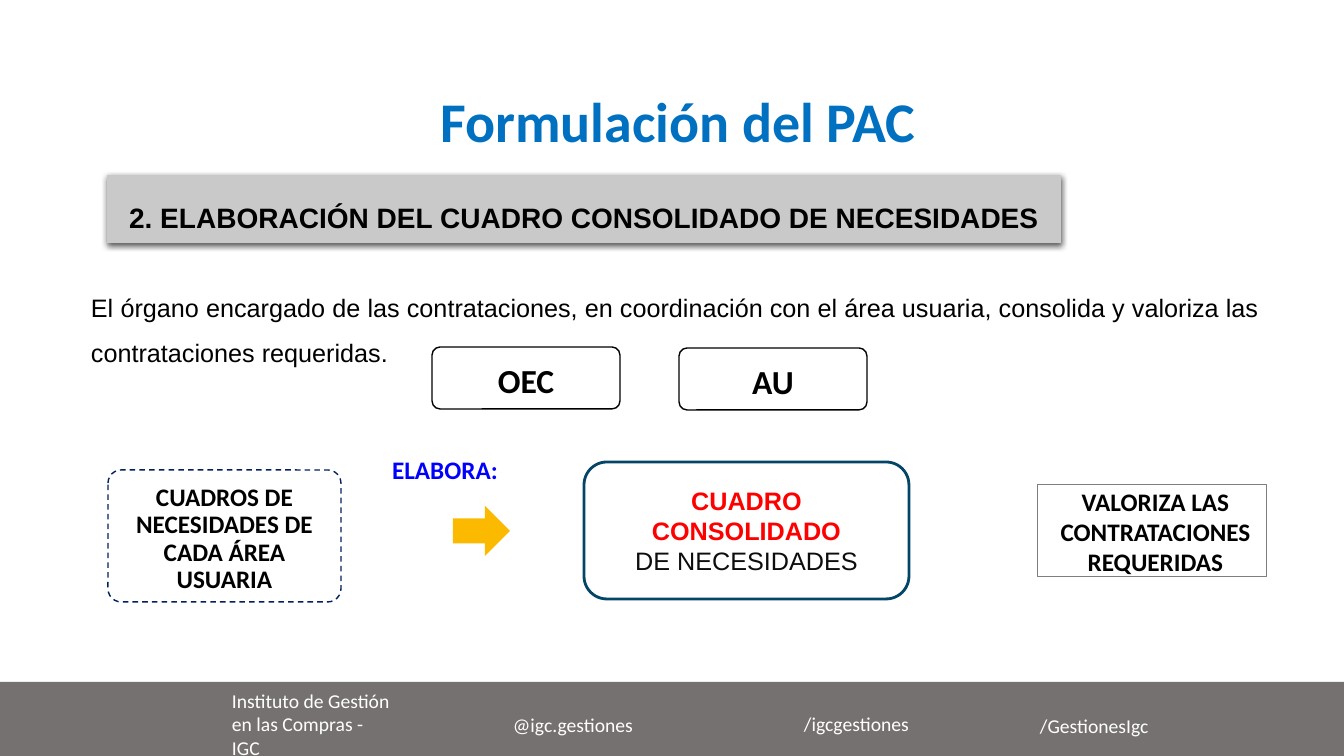
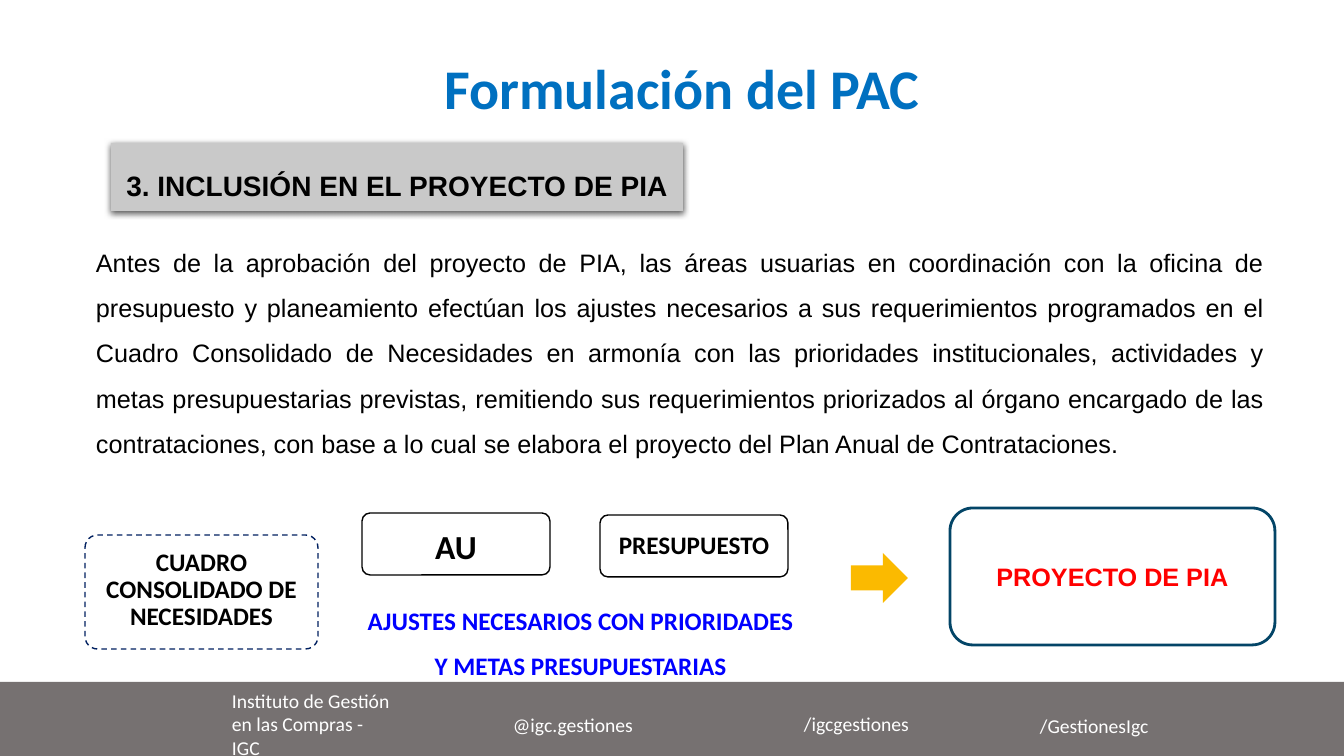
"""Build two slides on drawing up the annual procurement plan (PAC)."""
from lxml import etree
from pptx import Presentation
from pptx.dml.color import RGBColor
from pptx.enum.dml import MSO_LINE
from pptx.enum.shapes import MSO_SHAPE
from pptx.enum.text import MSO_ANCHOR, PP_ALIGN
from pptx.oxml import parse_xml
from pptx.oxml.ns import nsdecls
from pptx.util import Emu, Pt

RECTANGLE = MSO_SHAPE.RECTANGLE
ROUNDED = MSO_SHAPE.ROUNDED_RECTANGLE
ARROW = MSO_SHAPE.RIGHT_ARROW
DASH = MSO_LINE.DASH
TOP, MIDDLE = MSO_ANCHOR.TOP, MSO_ANCHOR.MIDDLE
LEFT, CENTER, JUSTIFY = PP_ALIGN.LEFT, PP_ALIGN.CENTER, PP_ALIGN.JUSTIFY

PX = 914400 / 100.8
WIDTH, HEIGHT = 1344, 756
COLORS = {
    "black": "000000", "white": "FFFFFF", "title": "0070C0", "heading": "C9C9C9",
    "footer": "767171", "input": "002060", "result": "034567", "red": "FF0000",
    "near_black": "0D0D0D", "label": "0000FF", "arrow": "FBBA00", "frame": "7E7E7E",
}
FOOTER_TEXTS = [
    (222, 724, "Instituto de Gestión en las Compras - IGC"),
    (503, 725, "@igc.gestiones"),
    (794, 724, "/igcgestiones"),
    (1030, 726, "/GestionesIgc"),
]
SLIDES = [
    {
        "title": (281, 91),
        "heading": (107, 175, 954, 68, "2. ELABORACIÓN DEL CUADRO CONSOLIDADO DE NECESIDADES"),
        "body": (81, 272, 1188, 102,
                 "El órgano encargado de las contrataciones, en coordinación con el área usuaria, "
                 "consolida y valoriza las contrataciones requeridas."),
        "input": (108, 470, 233, 132, "CUADROS DE NECESIDADES DE CADA ÁREA USUARIA"),
        "actors": [(432, 347, "OEC", 24), (679, 348, "AU", 24)],
        "arrow": (453, 506),
        "label": (375, 434, 140, 56, "ELABORA:"),
        "result": (584, 462, ["CUADRO CONSOLIDADO", "DE NECESIDADES"]),
        "framed": [(1038, 484, 229, 93, "VALORIZA LAS CONTRATACIONES REQUERIDAS")],
    },
    {
        "title": (285, 58),
        "heading": (111, 143, 572, 68, "3. INCLUSIÓN EN EL PROYECTO DE PIA"),
        "body": (86, 227, 1188, 239,
                 "Antes de la aprobación del proyecto de PIA, las áreas usuarias en coordinación "
                 "con la oficina de presupuesto y planeamiento efectúan los ajustes necesarios a "
                 "sus requerimientos programados en el Cuadro Consolidado de Necesidades en "
                 "armonía con las prioridades institucionales, actividades y metas "
                 "presupuestarias previstas, remitiendo sus requerimientos priorizados al órgano "
                 "encargado de las contrataciones, con base a lo cual se elabora el proyecto del "
                 "Plan Anual de Contrataciones."),
        "input": (85, 535, 233, 114, "CUADRO CONSOLIDADO DE NECESIDADES"),
        "actors": [(362, 513, "AU", 24), (600, 515, "PRESUPUESTO", 18)],
        "arrow": (851, 553),
        "label": (354, 585, 453, 97, "AJUSTES NECESARIOS CON PRIORIDADES Y METAS PRESUPUESTARIAS"),
        "result": (950, 508, ["PROYECTO DE PIA"]),
        "framed": [],
    },
]


def add_panel(slide, kind, bounds, fill=None, line=None, line_width=1, radius=None):
    """Add a preset shape, or a text box when kind is None."""
    box = [Emu(round(value * PX)) for value in bounds]
    if kind is None:
        return slide.shapes.add_textbox(*box)
    shape = slide.shapes.add_shape(kind, *box)
    shape.shadow.inherit = False
    if fill:
        shape.fill.solid()
        shape.fill.fore_color.rgb = RGBColor.from_string(COLORS[fill])
    else:
        shape.fill.background()
    if line:
        shape.line.color.rgb = RGBColor.from_string(COLORS[line])
        shape.line.width = Pt(line_width)
    else:
        shape.line.fill.background()
    if radius:
        shape.adjustments[0] = round(radius / min(bounds[2:]), 2)
    return shape


def write(shape, texts, size, color="black", font="Calibri", bold=True, align=CENTER,
          spacing=1.0, anchor=TOP, insets=(10, 5, 10, 5)):
    """Fill a shape with paragraphs of one style."""
    frame = shape.text_frame
    frame.text = "\n".join(texts)
    frame.word_wrap = True
    frame.vertical_anchor = anchor
    frame.margin_left, frame.margin_top, frame.margin_right, frame.margin_bottom = [
        Emu(round(inset * PX)) for inset in insets]
    for paragraph in frame.paragraphs:
        paragraph.alignment = align
        paragraph.line_spacing = spacing
        for run in paragraph.runs:
            run.font.size = Pt(size)
            run.font.name = font
            run.font.bold = bold
            run.font.color.rgb = RGBColor.from_string(COLORS[color])


presentation = Presentation()
presentation.slide_width = Emu(round(WIDTH * PX))
presentation.slide_height = Emu(round(HEIGHT * PX))

for content in SLIDES:
    slide = presentation.slides.add_slide(presentation.slide_layouts[6])

    add_panel(slide, RECTANGLE, (0, 682, WIDTH, HEIGHT - 682), "footer")
    for left, middle, text in FOOTER_TEXTS:
        footer_text = add_panel(slide, None, (left, middle - 20, 182, 40))
        write(footer_text, [text], 14, "white", bold=False, align=LEFT, anchor=MIDDLE)

    title = add_panel(slide, None, (*content["title"], 794, 145))
    write(title, ["Formulación del PAC"], 40, "title", spacing=0.89, insets=(8, 4, 8, 4))

    *bounds, text = content["heading"]
    heading = add_panel(slide, RECTANGLE, bounds, "heading")
    shadow = parse_xml(
        f'<a:outerShdw {nsdecls("a")} blurRad="57150" dist="19050" dir="5400000" '
        'algn="ctr" rotWithShape="0"/>')
    shadow_color = etree.SubElement(
        shadow, shadow.tag.replace("outerShdw", "srgbClr"), val=COLORS["black"])
    etree.SubElement(shadow_color, shadow.tag.replace("outerShdw", "alpha"), val="63000")
    heading.element.spPr.find(shadow.tag.replace("outerShdw", "effectLst")).append(shadow)
    write(heading, [text], 20, font="Arial", spacing=1.5, anchor=MIDDLE, insets=(7, 4, 7, 4))

    *bounds, text = content["body"]
    body = add_panel(slide, None, bounds)
    write(body, [text], 18, font="Arial", bold=False, align=JUSTIFY, spacing=1.5)

    *bounds, text = content["input"]
    input_card = add_panel(slide, ROUNDED, bounds, line="input", radius=13)
    input_card.line.dash_style = DASH
    write(input_card, [text], 18, spacing=0.9, insets=(11, 11, 11, 11))

    for left, top, text, size in content["actors"]:
        actor = add_panel(slide, ROUNDED, (left, top, 188, 62), "white", "black", radius=8)
        write(actor, [text], size, spacing=0.9, insets=(8, 15, 8, 0))

    add_panel(slide, ARROW, (*content["arrow"], 57, 50), "arrow")

    *bounds, text = content["label"]
    label = add_panel(slide, None, bounds)
    write(label, [text], 18, "label", spacing=1.5)

    left, top, texts = content["result"]
    result = add_panel(slide, ROUNDED, (left, top, 325, 137), line="result", line_width=2)
    write(result, texts, 18, "red", "Arial", anchor=MIDDLE, insets=(9, 4, 9, 4))
    for paragraph in result.text_frame.paragraphs[1:]:
        for run in paragraph.runs:
            run.font.bold = False
            run.font.color.rgb = RGBColor.from_string(COLORS["near_black"])

    for *bounds, text in content["framed"]:
        framed = add_panel(slide, RECTANGLE, bounds, line="frame", line_width=0.72)
        write(framed, [text], 18, insets=(6, 2, 0, 0))

presentation.save("out.pptx")
